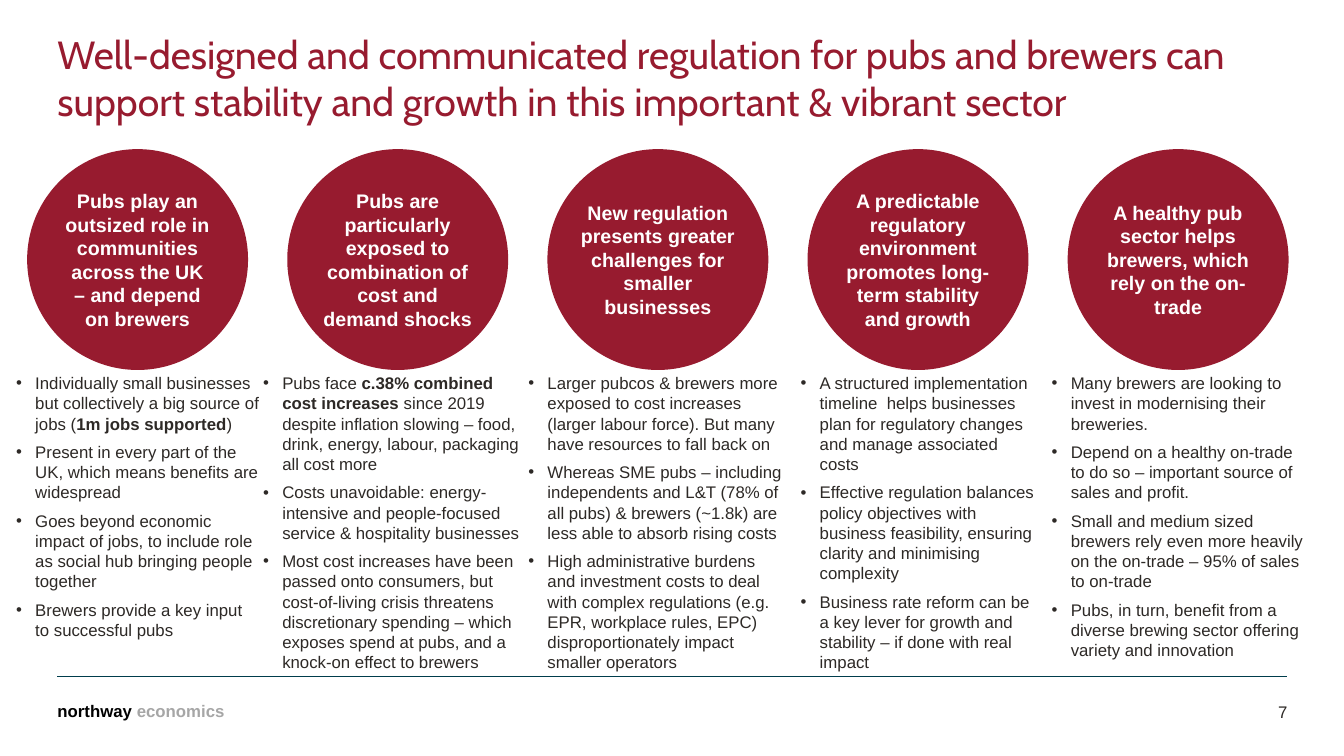
from dataclasses import dataclass

from lxml.etree import SubElement
from pptx import Presentation
from pptx.dml.color import RGBColor
from pptx.enum.shapes import MSO_CONNECTOR, MSO_SHAPE
from pptx.enum.text import MSO_ANCHOR, PP_ALIGN
from pptx.oxml.ns import qn
from pptx.util import Inches, Pt

# Content: bold passages stand between asterisks
TITLE = ("Well-designed and communicated regulation for pubs and brewers can "
         "support stability and growth in this important & vibrant sector")
FOOTER = (("northway ", "000000"), ("economics", "A6A6A6"))
PAGE_NUMBER = "7"

# Each column: circle text, left and width of its bullet list, bullets
COLUMNS = [
    ("Pubs play an outsized role in communities across the UK – and depend on brewers",
     0.16, 2.43,
     ["Individually small businesses but collectively a big source of jobs (*1m jobs supported*)",
      "Present in every part of the UK, which means benefits are widespread",
      "Goes beyond economic impact of jobs, to include role as social hub bringing people together",
      "Brewers provide a key input to successful pubs"]),
    ("Pubs are particularly exposed to combination of cost and demand shocks",
     2.61, 2.67,
     ["Pubs face *c.38% combined cost increases* since 2019 despite inflation slowing – food, "
      "drink, energy, labour, packaging all cost more",
      "Costs unavoidable: energy-intensive and people-focused service & hospitality businesses",
      "Most cost increases have been passed onto consumers, but cost-of-living crisis threatens "
      "discretionary spending – which exposes spend at pubs, and a knock-on effect to brewers"]),
    ("New regulation presents greater challenges for smaller businesses",
     5.24, 2.57,
     ["Larger pubcos & brewers more exposed to cost increases (larger labour force). "
      "But many have resources to fall back on",
      "Whereas SME pubs – including independents and L&T (78% of all pubs) & brewers (~1.8k) "
      "are less able to absorb rising costs",
      "High administrative burdens and investment costs to deal with complex regulations "
      "(e.g. EPR, workplace rules, EPC) disproportionately impact smaller operators"]),
    ("A predictable regulatory environment promotes long-term stability and growth",
     7.94, 2.32,
     ["A structured implementation timeline  helps businesses plan for regulatory changes "
      "and manage associated costs",
      "Effective regulation balances policy objectives with business feasibility, "
      "ensuring clarity and minimising complexity",
      "Business rate reform can be a key lever for growth and stability – "
      "if done with real impact"]),
    ("A healthy pub sector helps brewers, which rely on the on-trade",
     10.43, 2.51,
     ["Many brewers are looking to invest in modernising their breweries.",
      "Depend on a healthy on-trade to do so – important source of sales and profit.",
      "Small and medium sized brewers rely even more heavily on the on-trade – "
      "95% of sales to on-trade",
      "Pubs, in turn, benefit from a diverse brewing sector offering variety and innovation"]),
]


@dataclass(frozen=True)
class Theme:
    accent: str = "971B2F"
    rule: str = "003D4C"
    ink: str = "2D2926"
    white: str = "FFFFFF"
    heading_font: str = "Cabin"
    body_font: str = "Arial"
    title_size: int = 28
    circle_size: int = 14
    body_size: int = 12


THEME = Theme()

# Layout in inches
SLIDE_WIDTH, SLIDE_HEIGHT = 13.33, 7.5
MARGIN = 0.57
CONTENT_WIDTH = 12.19
CIRCLE_LEFT, CIRCLE_TOP, CIRCLE_SIDE, CIRCLE_PITCH = 0.28, 1.49, 2.17, 2.58
LIST_TOP, LIST_HEIGHT, BULLET_INDENT = 3.7, 3, 0.19
RULE_TOP = 6.71


def color(value):
    return RGBColor.from_string(value)


def style(run, size, ink, bold=False, font=THEME.body_font):
    run.font.size, run.font.bold, run.font.name = Pt(size), bold, font
    run.font.color.rgb = color(ink)


def set_frame(frame, side=0, vertical=0, anchor=MSO_ANCHOR.TOP):
    frame.word_wrap = True
    frame.margin_left = frame.margin_right = Inches(side)
    frame.margin_top = frame.margin_bottom = Inches(vertical)
    frame.vertical_anchor = anchor
    return frame


def add_text(slide, left, top, width, height, **frame_options):
    box = slide.shapes.add_textbox(*map(Inches, (left, top, width, height)))
    return set_frame(box.text_frame, **frame_options)


def add_bullet(paragraph, text):
    paragraph.space_after = Pt(6)
    properties = paragraph._p.get_or_add_pPr()
    properties.set("marL", str(Inches(BULLET_INDENT)))
    properties.set("indent", str(-Inches(BULLET_INDENT)))
    SubElement(properties, qn("a:buFont"), typeface=THEME.body_font)
    SubElement(properties, qn("a:buChar"), char="•")
    for index, part in enumerate(text.split("*")):
        run = paragraph.add_run()
        run.text = part
        style(run, THEME.body_size, THEME.ink, bold=index % 2 == 1)


def add_circle(slide, left, text, side_inset):
    circle = slide.shapes.add_shape(
        MSO_SHAPE.FLOWCHART_CONNECTOR,
        *map(Inches, (left, CIRCLE_TOP, CIRCLE_SIDE, CIRCLE_SIDE)))
    circle.shadow.inherit = False
    circle.fill.solid()
    circle.fill.fore_color.rgb = circle.line.color.rgb = color(THEME.accent)
    circle.line.width = Pt(1.5)
    frame = set_frame(circle.text_frame, side_inset, 0.04, MSO_ANCHOR.MIDDLE)
    frame.text = text
    paragraph = frame.paragraphs[0]
    paragraph.alignment = PP_ALIGN.CENTER
    style(paragraph.runs[0], THEME.circle_size, THEME.white, bold=True)


def add_list(slide, left, width, bullets):
    frame = add_text(slide, left, LIST_TOP, width, LIST_HEIGHT)
    for index, text in enumerate(bullets):
        paragraph = frame.add_paragraph() if index else frame.paragraphs[0]
        add_bullet(paragraph, text)


def add_footer(slide):
    rule = slide.shapes.add_connector(
        MSO_CONNECTOR.STRAIGHT,
        *map(Inches, (MARGIN, RULE_TOP, MARGIN + CONTENT_WIDTH, RULE_TOP)))
    rule.line.color.rgb = color(THEME.rule)
    rule.line.width = Pt(1)
    SubElement(rule._element.spPr, qn("a:effectLst"))

    number = add_text(slide, 9.61, 6.86, 3.16, 0.4, anchor=MSO_ANCHOR.MIDDLE)
    number.text = PAGE_NUMBER
    number.paragraphs[0].alignment = PP_ALIGN.RIGHT
    style(number.paragraphs[0].runs[0], THEME.body_size, THEME.ink)

    name = add_text(slide, MARGIN, 6.9, 2, 0.3, vertical=0.05)
    for word, ink in FOOTER:
        run = name.paragraphs[0].add_run()
        run.text = word
        style(run, THEME.body_size, ink, bold=True)


def main():
    presentation = Presentation()
    presentation.slide_width = Inches(SLIDE_WIDTH)
    presentation.slide_height = Inches(SLIDE_HEIGHT)
    slide = presentation.slides.add_slide(presentation.slide_layouts[6])

    add_footer(slide)

    # Title
    title = add_text(slide, MARGIN, 0.3, CONTENT_WIDTH, 0.94)
    title.text = TITLE
    style(title.paragraphs[0].runs[0], THEME.title_size, THEME.accent,
          font=THEME.heading_font)

    # Circles with their bullet lists
    for index, (message, left, width, bullets) in enumerate(COLUMNS):
        side_inset = 0 if index else 0.04
        add_circle(slide, CIRCLE_LEFT + index * CIRCLE_PITCH, message, side_inset)
        add_list(slide, left, width, bullets)

    presentation.save("out.pptx")


if __name__ == "__main__":
    main()
